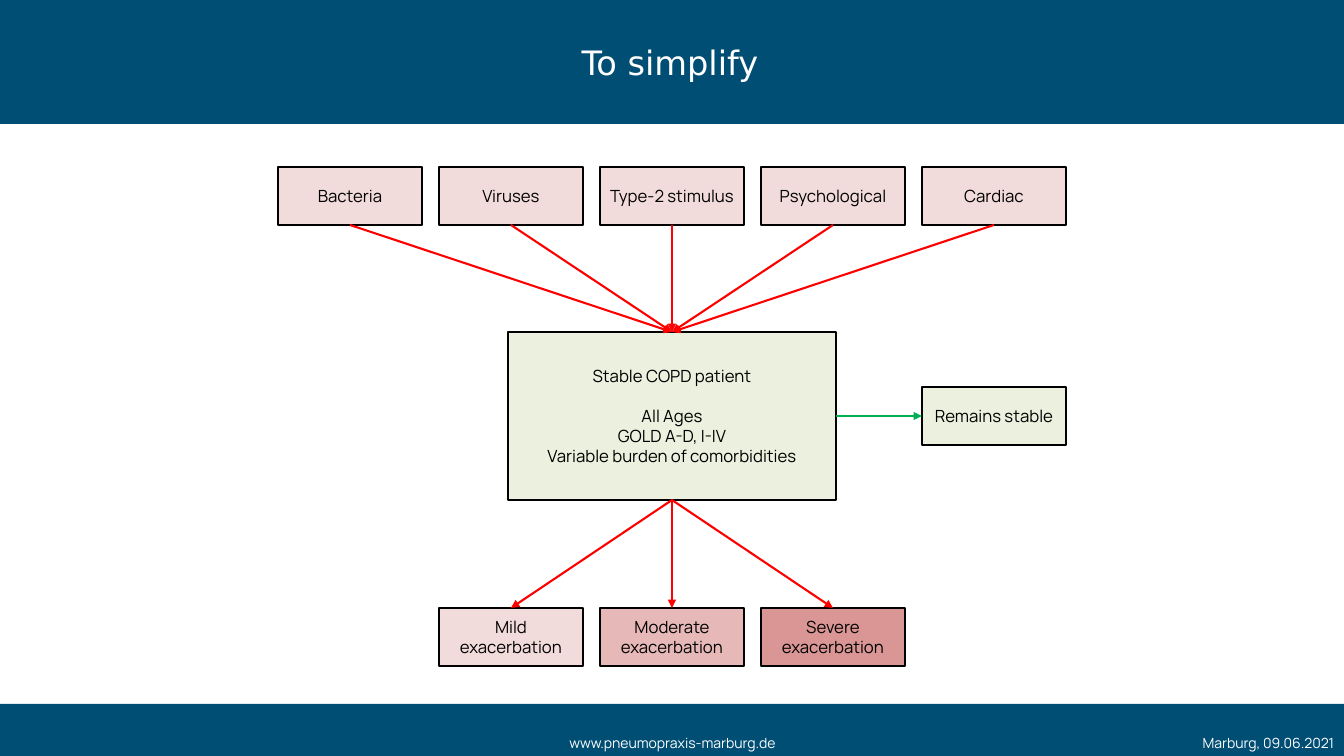
from dataclasses import dataclass

from lxml.etree import SubElement
from pptx import Presentation
from pptx.dml.color import RGBColor
from pptx.enum.shapes import MSO_CONNECTOR, MSO_SHAPE
from pptx.enum.text import MSO_ANCHOR as Anchor, PP_ALIGN as Align
from pptx.oxml.ns import qn
from pptx.shapes.autoshape import Shape
from pptx.slide import Slide
from pptx.text.text import TextFrame
from pptx.util import Pt

EMU_PER_PX = 914400 / 100.8
SLIDE_WIDTH, SLIDE_HEIGHT = 1344, 756

NAVY = RGBColor(0x00, 0x4E, 0x74)
WHITE = RGBColor(0xFF, 0xFF, 0xFF)
BLACK = RGBColor(0x00, 0x00, 0x00)
PALE_ROSE = RGBColor(0xF2, 0xDC, 0xDB)
ROSE = RGBColor(0xE6, 0xB9, 0xB8)
DARK_ROSE = RGBColor(0xD9, 0x96, 0x94)
PALE_GREEN = RGBColor(0xEB, 0xF1, 0xDE)
RED = RGBColor(0xFF, 0x00, 0x00)
GREEN = RGBColor(0x00, 0xB0, 0x50)

BODY_FONT, TITLE_FONT = "Manrope", "DejaVu Sans"
TOP, LEFT, BOTTOM, RIGHT = range(4)

BOX_WIDTH, BOX_HEIGHT, BOX_INSET = 144, 58, 7
COLUMN_PITCH = 161
COLUMNS = [(SLIDE_WIDTH - BOX_WIDTH) // 2 + COLUMN_PITCH * step for step in range(-2, 3)]
TRIGGER_TOP, OUTCOME_TOP = 167, 608


@dataclass(frozen=True)
class Box:
    text: str
    left: int
    top: int
    fill: RGBColor
    width: int = BOX_WIDTH
    height: int = BOX_HEIGHT


@dataclass(frozen=True)
class Label:
    text: str
    left: int
    top: int
    width: int
    height: int
    align: Align
    anchor: Anchor
    font: str = BODY_FONT
    size: int = 10


TRIGGER_NAMES = ["Bacteria", "Viruses", "Type-2 stimulus", "Psychological", "Cardiac"]
TRIGGERS = [Box(name, left, TRIGGER_TOP, PALE_ROSE)
            for name, left in zip(TRIGGER_NAMES, COLUMNS)]
OUTCOMES = [
    Box("Mild exacerbation", COLUMNS[1], OUTCOME_TOP, PALE_ROSE),
    Box("Moderate\nexacerbation", COLUMNS[2], OUTCOME_TOP, ROSE),
    Box("Severe exacerbation", COLUMNS[3], OUTCOME_TOP, DARK_ROSE),
]
PATIENT = Box(
    "Stable COPD patient\nAll Ages\nGOLD A-D, I-IV\nVariable burden of comorbidities",
    508, 332, PALE_GREEN, 328, 168)
REMAINS_STABLE = Box("Remains stable", COLUMNS[4], 387, PALE_GREEN)

BANDS = [(0, 124), (704, 52)]
LABELS = [
    Label("www.pneumopraxis-marburg.de", 476, 704, 393, 52, Align.CENTER, Anchor.BOTTOM),
    Label("Marburg, 09.06.2021", 951, 704, 393, 52, Align.RIGHT, Anchor.BOTTOM),
    Label("To simplify", 192, 0, 956, 125, Align.CENTER, Anchor.MIDDLE, TITLE_FONT, 24),
]


def px(length: int) -> int:
    return round(length * EMU_PER_PX)


def write_text(frame: TextFrame, text: str, font: str, size: int, color: RGBColor,
               align: Align, anchor: Anchor) -> None:
    frame.text = text
    frame.word_wrap = True
    frame.vertical_anchor = anchor
    for paragraph in frame.paragraphs:
        paragraph.alignment = align
        for run in paragraph.runs:
            run.font.name = font
            run.font.size = Pt(size)
            run.font.color.rgb = color


def add_rectangle(slide: Slide, left: int, top: int, width: int, height: int,
                  fill: RGBColor) -> Shape:
    shape = slide.shapes.add_shape(
        MSO_SHAPE.RECTANGLE, px(left), px(top), px(width), px(height))
    shape.shadow.inherit = False
    shape.fill.solid()
    shape.fill.fore_color.rgb = fill
    shape.line.fill.background()
    return shape


def add_box(slide: Slide, box: Box) -> Shape:
    shape = add_rectangle(slide, box.left, box.top, box.width, box.height, box.fill)
    shape.line.color.rgb = BLACK
    shape.line.width = Pt(2)
    frame = shape.text_frame
    frame.margin_left = frame.margin_right = px(BOX_INSET)
    write_text(frame, box.text, BODY_FONT, 12, BLACK, Align.CENTER, Anchor.MIDDLE)
    return shape


def add_label(slide: Slide, label: Label) -> None:
    text_box = slide.shapes.add_textbox(
        px(label.left), px(label.top), px(label.width), px(label.height))
    write_text(text_box.text_frame, label.text, label.font, label.size, WHITE,
               label.align, label.anchor)


def add_arrow(slide: Slide, source: Shape, source_side: int,
              target: Shape, target_side: int, color: RGBColor) -> None:
    """Join the middles of two box sides, with the arrowhead at the target."""
    arrow = slide.shapes.add_connector(MSO_CONNECTOR.STRAIGHT, 0, 0, 0, 0)
    arrow.begin_connect(source, source_side)
    arrow.end_connect(target, target_side)
    arrow.line.color.rgb = color
    arrow.line.width = Pt(1.5)
    properties = arrow.element.spPr
    SubElement(properties.find(qn("a:ln")), qn("a:tailEnd"), type="triangle")
    SubElement(properties, qn("a:effectLst"))


def main() -> None:
    presentation = Presentation()
    presentation.slide_width = px(SLIDE_WIDTH)
    presentation.slide_height = px(SLIDE_HEIGHT)
    slide = presentation.slides.add_slide(presentation.slide_layouts[6])

    for top, height in BANDS:
        add_rectangle(slide, 0, top, SLIDE_WIDTH, height, NAVY)
    for label in LABELS:
        add_label(slide, label)

    triggers = [add_box(slide, box) for box in TRIGGERS]
    patient = add_box(slide, PATIENT)
    patient.text_frame.paragraphs[1].space_before = Pt(14)
    remains_stable = add_box(slide, REMAINS_STABLE)
    outcomes = [add_box(slide, box) for box in OUTCOMES]

    for trigger in triggers:
        add_arrow(slide, trigger, BOTTOM, patient, TOP, RED)
    add_arrow(slide, patient, RIGHT, remains_stable, LEFT, GREEN)
    for outcome in outcomes:
        add_arrow(slide, patient, BOTTOM, outcome, TOP, RED)

    presentation.save("out.pptx")


if __name__ == "__main__":
    main()
